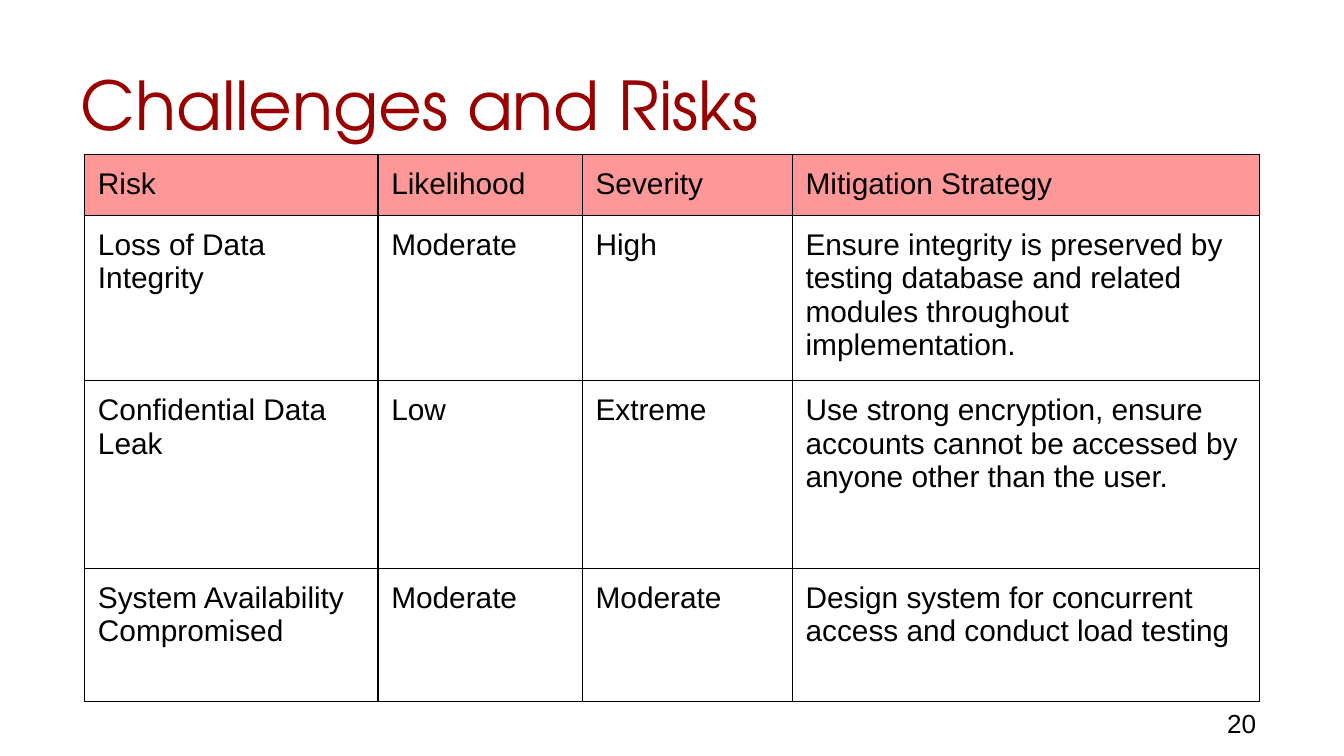
"""Build the risk table slide."""
from dataclasses import dataclass

from lxml import etree
from pptx import Presentation
from pptx import util as u
from pptx.dml.color import RGBColor
from pptx.enum import text
from pptx.oxml.ns import qn

PX = 4762.5
INK, RED, PINK = "000000", "990000", "FE9797"
PAD = 19
COLS = (419, 292, 300, 667)


@dataclass
class Row:
    """One table row with its height and fill."""
    high: int
    words: tuple[str, ...]
    fill: str = ""


ROWS = (
    Row(87, ("Risk", "Likelihood", "Severity", "Mitigation Strategy"), PINK),
    Row(236, ("Loss of Data Integrity", "Moderate", "High",
              "Ensure integrity is preserved by testing database and related "
              "modules throughout implementation.")),
    Row(268, ("Confidential Data Leak", "Low", "Extreme",
              "Use strong encryption, ensure accounts cannot be accessed by "
              "anyone other than the user.")),
    Row(190, ("System Availability Compromised", "Moderate", "Moderate",
              "Design system for concurrent access and conduct load testing")),
)


def px(n: int) -> u.Emu:
    """Turn px into EMU."""
    return u.Emu(int(n * PX))


def tint(code: str) -> RGBColor:
    """Turn a hex string into a colour."""
    return RGBColor.from_string(code)


def put(obj: object, props: dict) -> None:
    """Set each attribute from a dict."""
    for name, val in props.items():
        setattr(obj, name, val)


def pads(n: int) -> dict:
    """Give equal margins on all sides."""
    return {f"margin_{side}": px(n) for side in ("left", "top", "right", "bottom")}


def write(frame: object, words: str, size: int, face: str = "Arial",
          ink: str = INK) -> None:
    """Write one left-aligned paragraph of styled text."""
    par = frame.paragraphs[0]
    par.alignment = text.PP_ALIGN.LEFT
    run = par.add_run()
    run.text = words
    put(run.font, {"size": u.Pt(size), "name": face, "bold": False})
    run.font.color.rgb = tint(ink)


def edge(cell: object) -> None:
    """Draw thin borders around a cell."""
    props = cell._tc.get_or_add_tcPr()
    for tag in ("a:lnL", "a:lnR", "a:lnT", "a:lnB"):
        line = etree.SubElement(props, qn(tag), w=str(u.Pt(0.75)))
        fill = etree.SubElement(line, qn("a:solidFill"))
        etree.SubElement(fill, qn("a:srgbClr"), val=INK)


def grid(slide: object, left: int, top: int) -> None:
    """Draw the risk table."""
    high = sum(row.high for row in ROWS)
    table = slide.shapes.add_table(len(ROWS), len(COLS), px(left), px(top),
                                   px(sum(COLS)), px(high)).table
    put(table, {"first_row": False, "horz_banding": False})
    for col, wide in zip(table.columns, COLS):
        col.width = px(wide)
    for line, row in zip(table.rows, ROWS):
        line.height = px(row.high)
        for cell, words in zip(line.cells, row.words):
            put(cell, pads(PAD))
            edge(cell)
            if row.fill:
                cell.fill.solid()
                cell.fill.fore_color.rgb = tint(row.fill)
            else:
                cell.fill.background()
            write(cell.text_frame, words, 16)


def main() -> None:
    """Build and save the slide."""
    deck = Presentation()
    put(deck, {"slide_width": px(1920), "slide_height": px(1080)})
    slide = deck.slides.add_slide(deck.slide_layouts[5])
    title = slide.shapes.title
    put(title, {"left": px(96), "top": px(44), "width": px(1728), "height": px(180)})
    put(title.text_frame, {**pads(PAD), "word_wrap": True,
                           "auto_size": text.MSO_AUTO_SIZE.NONE,
                           "vertical_anchor": text.MSO_ANCHOR.BOTTOM})
    write(title.text_frame, "Challenges and Risks", 36, "TeX Gyre Adventor", RED)
    grid(slide, 121, 221)
    page = slide.shapes.add_textbox(px(1734), px(1001), px(144), px(58))
    page.text_frame.word_wrap = True
    write(page.text_frame, "20", 14)
    deck.save("out.pptx")


if __name__ == "__main__":
    main()
